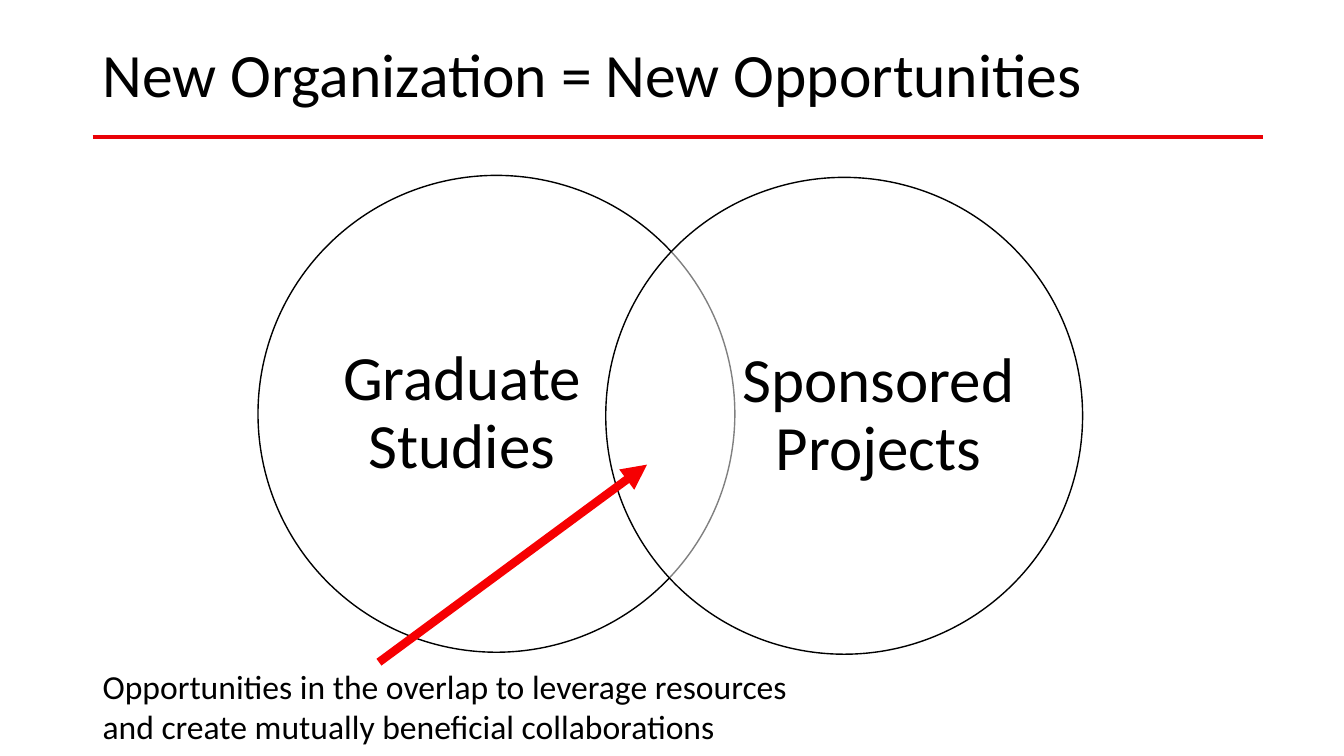
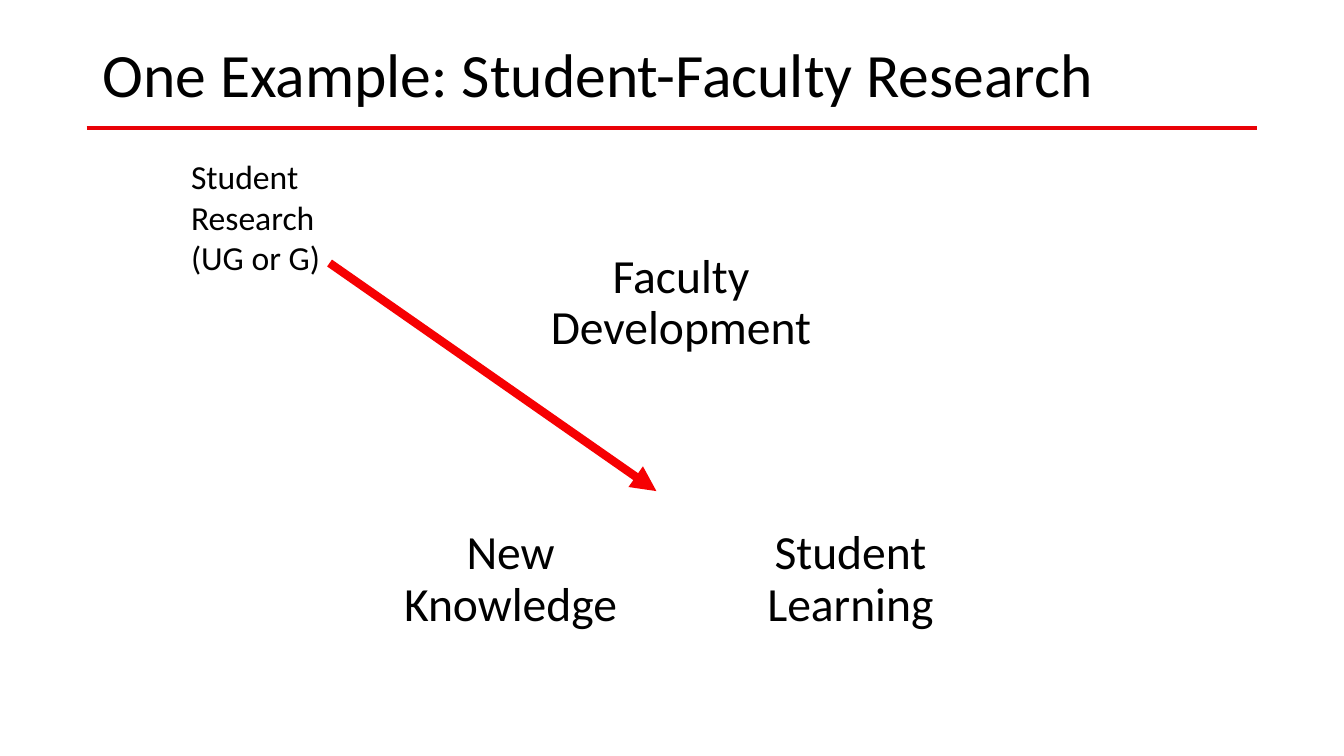
from lxml.etree import SubElement
from pptx import Presentation
from pptx.dml.color import RGBColor
from pptx.enum.shapes import MSO_CONNECTOR, MSO_SHAPE
from pptx.enum.text import MSO_ANCHOR, PP_ALIGN
from pptx.oxml.ns import qn
from pptx.util import Pt

COLORS = {"ink": "000000", "paper": "FFFFFF", "rule": "E90207", "arrow": "F60002"}
FONT = "Calibri"
TITLE = (66.2, 3.1, 828, 104.4)
WIDE = 836  # length of the rule below each title


def write(slide, box, lines, size, label=False, tight=False):
    """Add one paragraph per line; a label is centred and has no margins."""
    shape = slide.shapes.add_textbox(*map(Pt, box))
    frame = shape.text_frame
    frame.word_wrap = True
    if tight:
        frame.vertical_anchor = MSO_ANCHOR.MIDDLE
    if label:
        frame.margin_left = frame.margin_right = 0
        frame.margin_top = frame.margin_bottom = 0
    for i, line in enumerate(lines):
        para = frame.add_paragraph() if i else frame.paragraphs[0]
        para.alignment = PP_ALIGN.CENTER if label else PP_ALIGN.LEFT
        if tight:
            para.line_spacing = 0.9
        run = para.add_run()
        run.text = line
        run.font.name = FONT
        run.font.size = Pt(size)
        run.font.color.rgb = RGBColor.from_string(COLORS["ink"])


def draw(slide, ends, color, width, head=False):
    line = slide.shapes.add_connector(MSO_CONNECTOR.STRAIGHT, *map(Pt, ends))
    line.line.color.rgb = RGBColor.from_string(COLORS[color])
    line.line.width = Pt(width)
    if head:
        SubElement(line.line._get_or_add_ln(), qn("a:tailEnd"), type="triangle")
    SubElement(line._element.spPr, qn("a:effectLst"))


deck = Presentation()
deck.slide_width, deck.slide_height = Pt(960), Pt(540)

# Each disc: name, left and top of the circle, box of the label
pages = [
    {
        "title": "New Organization = New Opportunities",
        "rule": (66.2, 97.9),
        "side": 340.6,
        "edge": True,
        "size": 45,
        "discs": [
            ("Graduate Studies", (184.3, 125.3), (231.8, 165.6, 196.6, 260.6)),
            ("Sponsored Projects", (432.7, 126.7), (529.2, 167, 196.6, 260.6)),
        ],
        "arrow": (270.7, 473, 462.2, 331.9),
        "note": ["Opportunities in the overlap to leverage resources "
                 "and create mutually beneficial collaborations"],
        "place": (66.2, 471.9, 517.7, 65.5),
    },
    {
        "title": "One Example: Student-Faculty Research",
        "rule": (61.9, 91.4),
        "side": 260.6,
        "edge": False,
        "size": 34,
        "discs": [
            ("Faculty Development", (355.7, 112.3), (391, 158.2, 190.8, 117.4)),
            ("Student Learning", (450, 275.8), (529.4, 342.7, 156.2, 143.3)),
            ("New Knowledge", (262.1, 275.8), (286.6, 342.7, 156.2, 143.3)),
        ],
        "arrow": (235.4, 187.9, 468.9, 350.8),
        "note": ["Student Research", "(UG or G)"],
        "place": (129.4, 108, 119.5, 94.3),
    },
]

for page in pages:
    slide = deck.slides.add_slide(deck.slide_layouts[6])
    write(slide, TITLE, [page["title"]], 44, tight=True)

    side = Pt(page["side"])
    for name, spot, box in page["discs"]:
        disc = slide.shapes.add_shape(MSO_SHAPE.OVAL, *map(Pt, spot), side, side)
        disc.shadow.inherit = False
        disc.fill.solid()
        disc.fill.fore_color.rgb = RGBColor.from_string(COLORS["paper"])
        tint = disc._element.spPr.find(qn("a:solidFill"))[0]
        SubElement(tint, qn("a:alpha"), val="50000")
        if page["edge"]:
            disc.line.color.rgb = RGBColor.from_string(COLORS["ink"])
            disc.line.width = Pt(1)
        else:
            disc.line.fill.background()
        write(slide, box, [name], page["size"], label=True, tight=True)

    draw(slide, page["arrow"], "arrow", 6, head=True)
    write(slide, page["place"], page["note"], 24)
    left, top = page["rule"]
    draw(slide, (left, top, left + WIDE, top), "rule", 3)

deck.save("out.pptx")
